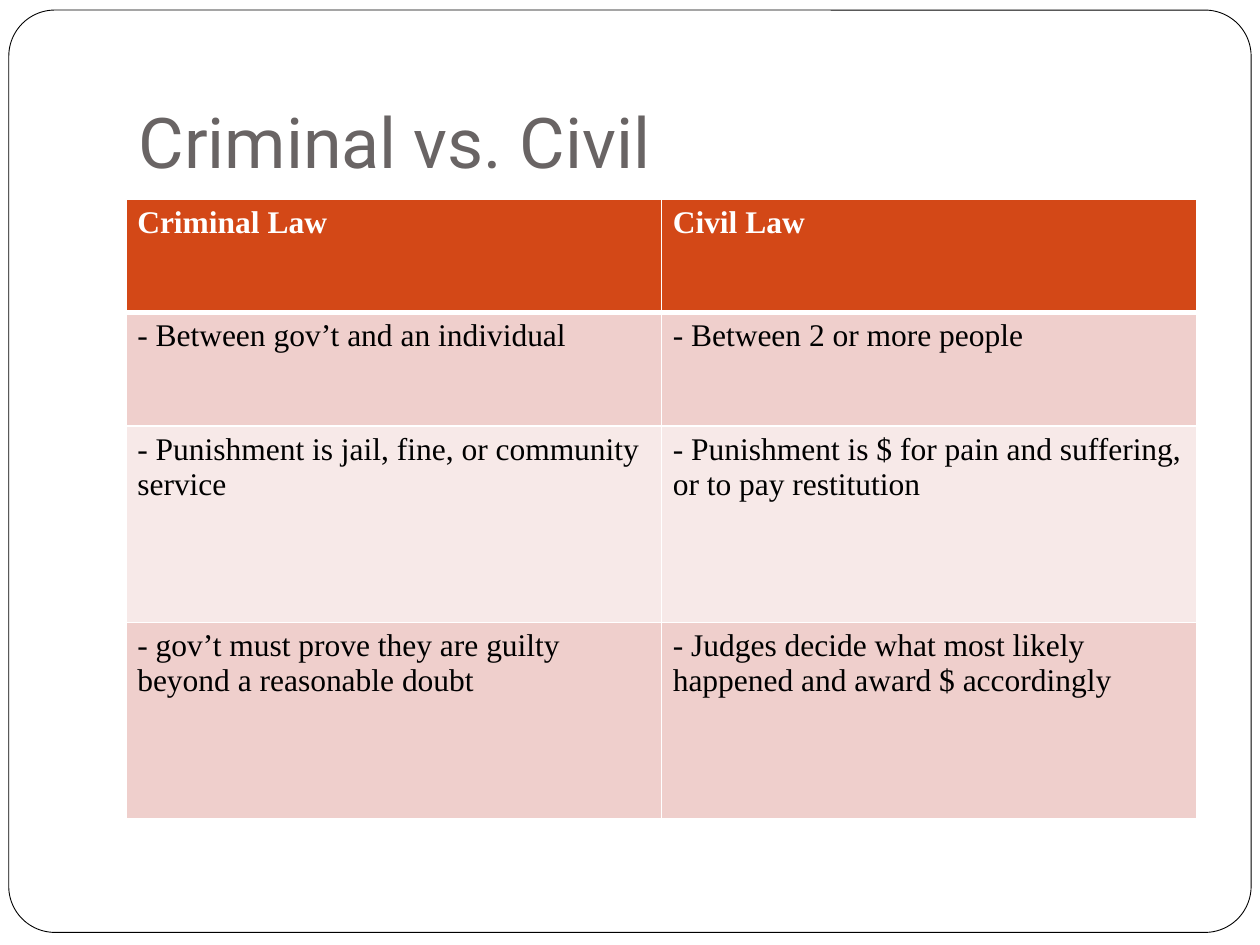
from pptx import Presentation
from pptx.dml.color import RGBColor
from pptx.enum.shapes import MSO_SHAPE as Shape
from pptx.enum.text import MSO_ANCHOR as Anchor, PP_ALIGN as Align
from pptx.oxml import parse_xml
from pptx.oxml.ns import nsdecls
from pptx.util import Pt

PX = 9144  # EMU per px, 100 px to the inch
WHITE = RGBColor(0xFF, 0xFF, 0xFF)
BLACK = RGBColor(0, 0, 0)
GREY = RGBColor(0x69, 0x64, 0x64)
RUST = RGBColor(0xD3, 0x48, 0x17)
ROSE = RGBColor(0xEF, 0xCF, 0xCC)
BLUSH = RGBColor(0xF7, 0xE9, 0xE8)

ROWS = [
    ("Criminal Law", "Civil Law"),
    ("- Between gov’t and an individual", "- Between 2 or more people"),
    ("- Punishment is jail, fine, or community service",
     "- Punishment is $ for pain and suffering, or to pay restitution"),
    ("- gov’t must prove they are guilty beyond a reasonable doubt",
     "- Judges decide what most likely happened and award $ accordingly"),
]
HEIGHTS = [90, 90, 156, 156]


def scale(box):
    return [n * PX for n in box]


def style(para, font, size, color, bold=False):
    for run in para.runs:
        run.font.name = font
        run.font.size = Pt(size)
        run.font.color.rgb = color
        run.font.bold = bold


def add_frame(slide, box):
    frame = slide.shapes.add_shape(Shape.ROUNDED_RECTANGLE, *scale(box))
    frame.adjustments[0] = 0.05
    frame.shadow.inherit = False
    frame.fill.solid()
    frame.fill.fore_color.rgb = WHITE
    frame.line.color.rgb = BLACK
    frame.line.width = Pt(0.5)
    # Send behind the title
    slide.shapes._spTree.insert(2, frame._element)


def add_title(slide, box, text):
    title = slide.shapes.title
    title.left, title.top, title.width, title.height = scale(box)
    body = title.text_frame
    body.text = text
    body.vertical_anchor = Anchor.BOTTOM
    body.margin_left = body.margin_right = body.margin_bottom = 10 * PX
    body.margin_top = 5 * PX
    body.paragraphs[0].alignment = Align.LEFT
    style(body.paragraphs[0], "Roboto", 40, GREY)


def set_edges(cell, row):
    # Thick rule under the header, thin rules elsewhere
    widths = {"L": 1, "R": 1, "T": 3 if row == 1 else 1, "B": 3 if row == 0 else 1}
    props = cell._tc.get_or_add_tcPr()
    for side, width in widths.items():
        props.append(parse_xml(
            f'<a:ln{side} {nsdecls("a")} w="{Pt(width)}"><a:solidFill>'
            f'<a:srgbClr val="{WHITE}"/></a:solidFill></a:ln{side}>'))


def add_grid(slide, box):
    cols = len(ROWS[0])
    grid = slide.shapes.add_table(len(ROWS), cols, *scale(box)).table
    for col in grid.columns:
        col.width = box[2] * PX // cols
    for r, texts in enumerate(ROWS):
        grid.rows[r].height = HEIGHTS[r] * PX
        head = r == 0
        tint = RUST if head else ROSE if r % 2 else BLUSH
        for c, text in enumerate(texts):
            cell = grid.cell(r, c)
            cell.text = text
            cell.margin_left = cell.margin_right = 9 * PX
            cell.margin_top = cell.margin_bottom = 5 * PX
            style(cell.text_frame.paragraphs[0], "Times New Roman", 18,
                  WHITE if head else BLACK, head)
            set_edges(cell, r)
            cell.fill.solid()
            cell.fill.fore_color.rgb = tint


def main():
    deck = Presentation()
    deck.slide_width, deck.slide_height = scale((1000, 750))
    slide = deck.slides.add_slide(deck.slide_layouts[5])
    add_frame(slide, (7, 8, 986, 732))
    add_title(slide, (100, 30, 850, 125), "Criminal vs. Civil")
    add_grid(slide, (100, 158, 850, sum(HEIGHTS)))
    deck.save("out.pptx")


if __name__ == "__main__":
    main()
